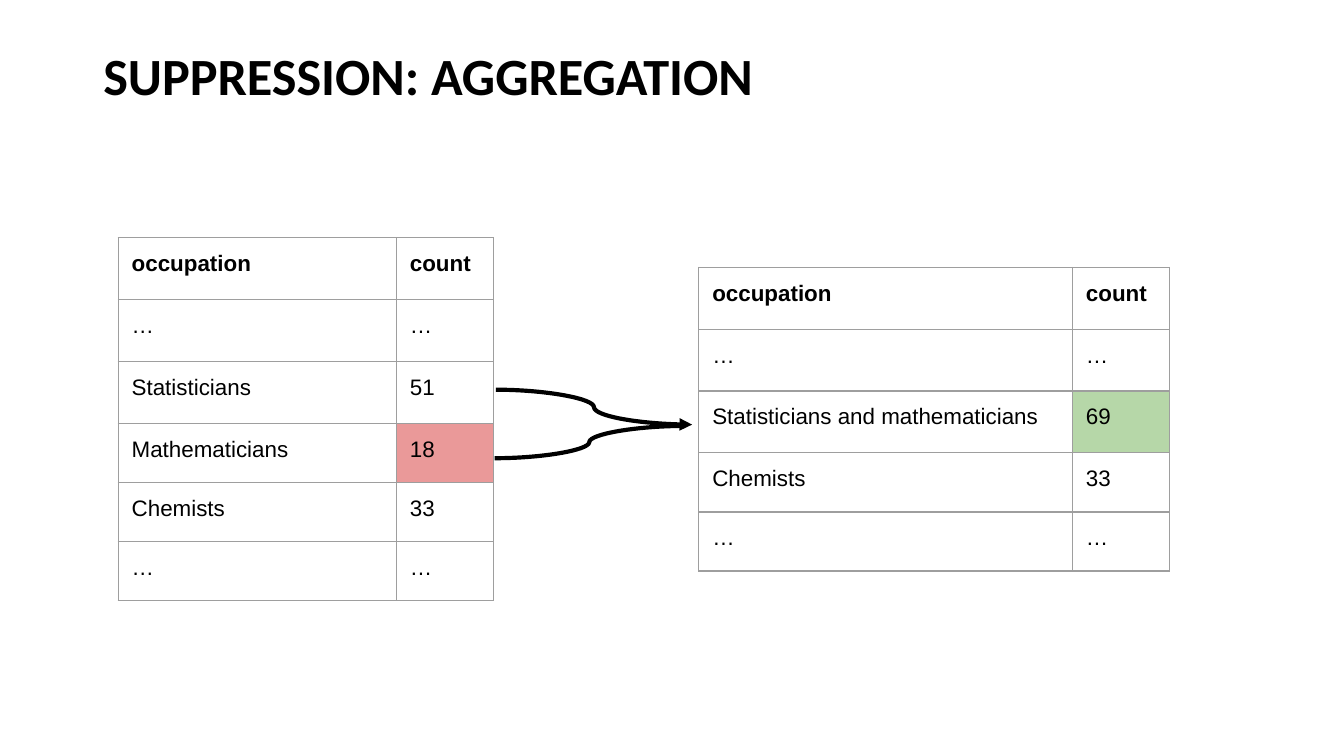
from lxml import etree
from pptx import Presentation
from pptx.dml.color import RGBColor
from pptx.enum.shapes import MSO_CONNECTOR
from pptx.oxml.ns import qn
from pptx.util import Inches, Pt

CURVE = MSO_CONNECTOR.CURVE
BLACK, GREY, RED, GREEN = "000000", "9E9E9E", "EA9999", "B6D7A8"
WIDTH = 10
HEIGHT = WIDTH * 9 / 16
TALL, SHORT, COUNT_WIDTH = 0.46, 0.44, 0.72

TITLE = "SUPPRESSION: AGGREGATION"
HEADER, GAP = ("occupation", "count"), ("…", "…")
TABLES = [
    dict(left=0.88, top=1.77, name_width=2.07, tall_rows=3, marked=("18", RED),
         rows=[HEADER, GAP, ("Statisticians", "51"), ("Mathematicians", "18"),
               ("Chemists", "33"), GAP]),
    dict(left=5.2, top=1.99, name_width=2.78, tall_rows=3, marked=("69", GREEN),
         rows=[HEADER, GAP, ("Statisticians and mathematicians", "69"),
               ("Chemists", "33"), GAP]),
]
MERGE_CURVES = [((3.69, 2.9), (5.15, 3.16), True),
                ((3.68, 3.41), (5.09, 3.17), False)]


def rgb(color):
    """Turn a hex string into a colour."""
    return RGBColor.from_string(color)


def set_font(p, name, size, bold):
    """Set the font of a whole paragraph in black."""
    p.font.name, p.font.size, p.font.bold = name, Pt(size), bold
    p.font.color.rgb = rgb(BLACK)


def add_borders(cell):
    """Draw a thin grey border on all four sides of a cell."""
    tc_pr = cell._tc.get_or_add_tcPr()
    for side in ("a:lnL", "a:lnR", "a:lnT", "a:lnB"):
        ln = etree.SubElement(tc_pr, qn(side), w=str(Pt(0.75)))
        fill = etree.SubElement(ln, qn("a:solidFill"))
        etree.SubElement(fill, qn("a:srgbClr"), val=GREY)


def fill_cell(cell, text, bold, color):
    """Write one cell with its margins, borders and fill."""
    cell.margin_left = cell.margin_right = Inches(0.1)
    cell.margin_top = cell.margin_bottom = Inches(0.1)
    p = cell.text_frame.paragraphs[0]
    p.text = text
    set_font(p, "Arial", 12, bold)
    add_borders(cell)
    if color:
        cell.fill.solid()
        cell.fill.fore_color.rgb = rgb(color)
    else:
        cell.fill.background()


def add_count_table(s, left, top, name_width, tall_rows, marked, rows):
    """Add a table of occupations with one marked count."""
    widths = (name_width, COUNT_WIDTH)
    heights = [TALL if i < tall_rows else SHORT for i in range(len(rows))]
    table = s.shapes.add_table(len(rows), len(widths), Inches(left), Inches(top),
                               Inches(sum(widths)), Inches(sum(heights))).table
    table.first_row = table.horz_banding = False
    for column, width in zip(table.columns, widths):
        column.width = Inches(width)
    for i, (height, row) in enumerate(zip(heights, rows)):
        table.rows[i].height = Inches(height)
        for j, text in enumerate(row):
            color = marked[1] if text == marked[0] else None
            fill_cell(table.cell(i, j), text, i == 0, color)


def add_curve(s, start, end, arrow):
    """Add a curved connector, with an arrowhead if asked."""
    curve = s.shapes.add_connector(CURVE, *map(Inches, start + end))
    curve.line.color.rgb = rgb(BLACK)
    curve.line.width = Pt(2.25)
    if arrow:
        etree.SubElement(curve.line._get_or_add_ln(), qn("a:tailEnd"), type="triangle")
    etree.SubElement(curve._element.spPr, qn("a:effectLst"))


def add_title(s):
    """Add the slide title."""
    tf = s.shapes.add_textbox(Inches(0.67), Inches(0.27),
                              Inches(8.38), Inches(1.41)).text_frame
    tf.word_wrap = True
    p = tf.paragraphs[0]
    p.text = TITLE
    set_font(p, "Calibri", 28, True)


def main():
    """Build and save the slide."""
    prs = Presentation()
    prs.slide_width, prs.slide_height = Inches(WIDTH), Inches(HEIGHT)
    s = prs.slides.add_slide(prs.slide_layouts[6])
    for table in TABLES:
        add_count_table(s, **table)
    for start, end, arrow in MERGE_CURVES:
        add_curve(s, start, end, arrow)
    add_title(s)
    prs.save("out.pptx")


if __name__ == "__main__":
    main()
